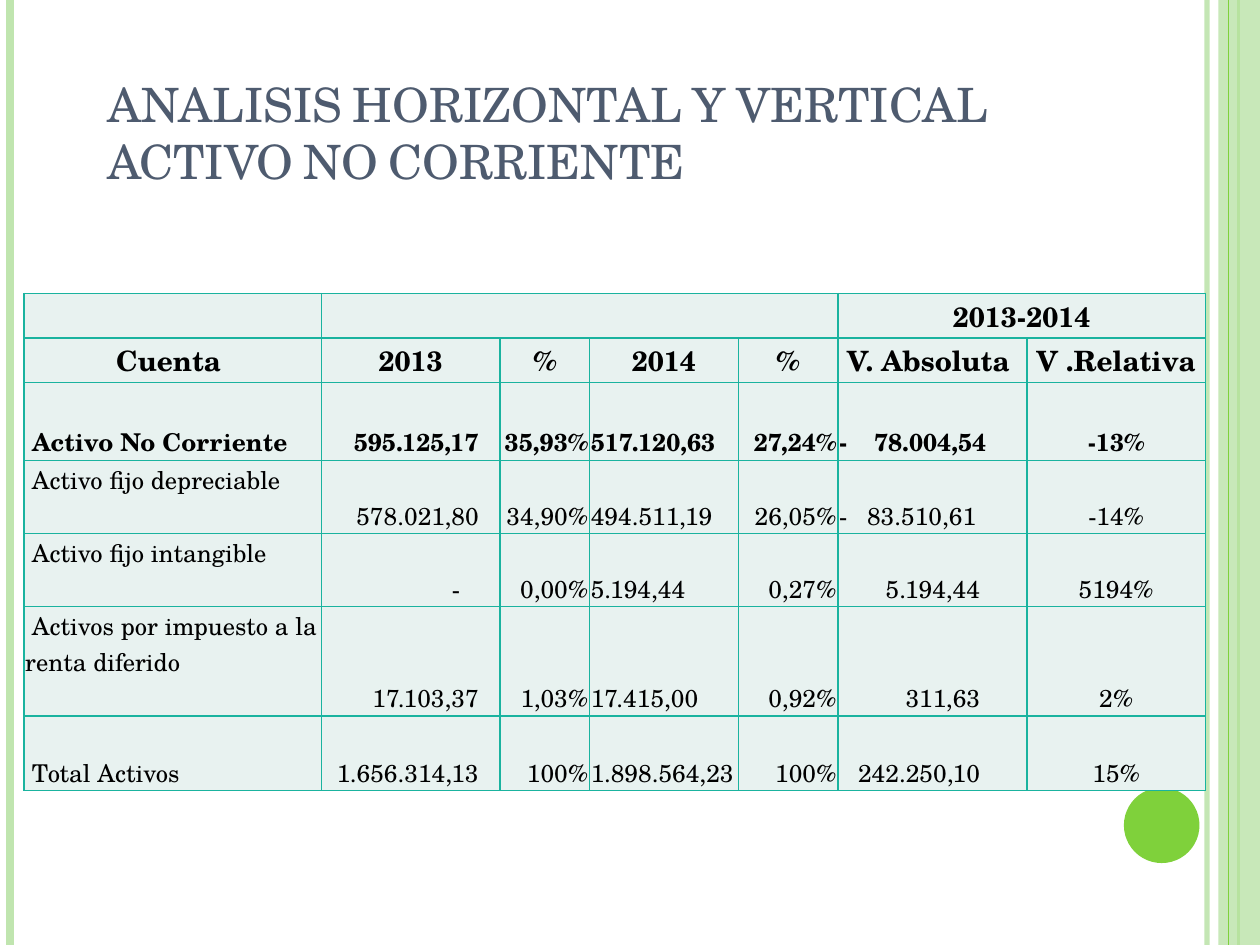
import pptx
import pptx.util
import pptx.dml.color
import pptx.enum.shapes
import pptx.enum.text
import pptx.oxml
import pptx.oxml.ns
from lxml import etree

Inches = pptx.util.Inches
Pt = pptx.util.Pt
ALIGN = pptx.enum.text.PP_ALIGN
ANCHOR = pptx.enum.text.MSO_ANCHOR
SHAPE = pptx.enum.shapes.MSO_SHAPE
qn = pptx.oxml.ns.qn

FONT = "TeX Gyre Schola"
COLORS = {
    "pale_green": "C0E5AF",
    "green": "7FD13B",
    "title": "4E5B6F",
    "text": "000000",
    "cell": "E8F2F0",
    "border": "1AB39F",
}
COLUMN_WIDTHS = [2.36, 1.42, 0.71, 1.18, 0.79, 1.5, 1.42]
ROW_HEIGHTS = [0.35, 0.35, 0.62, 0.58, 0.58, 0.87, 0.59]
COLUMN_ALIGNMENTS = [ALIGN.LEFT, ALIGN.RIGHT, ALIGN.RIGHT, ALIGN.LEFT,
                     ALIGN.RIGHT, ALIGN.LEFT, ALIGN.CENTER]
RIGHT_MARGINS = [0.01, 0.17, 0.01, 0.01, 0.01, 0.01, 0.01]
AMOUNT_TABS = {2: 1.17, 3: 1.09}
AMOUNT_TAB = 1.12
TOP_LABELS = (3, 4, 5)
ROWS = [
    ["", "", "", "", "", " 2013-2014 ", ""],
    ["Cuenta ", "2013", "%", "2014", "%", " V. Absoluta", "V .Relativa"],
    [" Activo No Corriente", "595.125,17", "35,93%", "517.120,63", "27,24%", "-\t78.004,54", "-13%"],
    [" Activo fijo depreciable", "578.021,80", "34,90%", "494.511,19", "26,05%", "-\t83.510,61", "-14%"],
    [" Activo fijo intangible", "-", "0,00%", "5.194,44", "0,27%", "\t5.194,44", "5194%"],
    [" Activos por impuesto a la renta diferido", "17.103,37", "1,03%", "17.415,00", "0,92%", "\t311,63", "2%"],
    [" Total Activos", "1.656.314,13", "100%", "1.898.564,23", "100%", "\t242.250,10", "15%"],
]


def rgb(name):
    """Return the named colour."""
    return pptx.dml.color.RGBColor.from_string(COLORS[name])


def set_opacity(shape, percent):
    """Make the solid colour of a shape partly transparent."""
    color = next(shape._element.spPr.iter(qn("a:srgbClr")))
    etree.SubElement(color, qn("a:alpha"), val=str(percent * 1000))


def add_run(paragraph, text, size, color, bold=False):
    """Add one formatted run to a paragraph."""
    run = paragraph.add_run()
    run.text = text
    run.font.name = FONT
    run.font.size = Pt(size)
    run.font.bold = bold
    run.font.color.rgb = rgb(color)
    return run


def add_stripe(slide, x, height, color, width):
    """Draw a vertical line from the top of the slide."""
    line = slide.shapes.add_connector(
        pptx.enum.shapes.MSO_CONNECTOR.STRAIGHT, Inches(x), 0, Inches(x), Inches(height))
    line.line.color.rgb = rgb(color)
    line.line.width = Pt(width)
    etree.SubElement(line._element.spPr, qn("a:effectLst"))
    return line


def add_block(slide, kind, left, top, width, height, color):
    """Draw a filled shape without an outline."""
    shape = slide.shapes.add_shape(
        kind, Inches(left), Inches(top), Inches(width), Inches(height))
    shape.shadow.inherit = False
    shape.fill.solid()
    shape.fill.fore_color.rgb = rgb(color)
    shape.line.fill.background()
    return shape


def add_frame(slide, width, height):
    """Draw the side stripes, the band and the disc."""
    set_opacity(add_stripe(slide, width - 0.42, height, "pale_green", 3), 93)
    add_stripe(slide, 0.08, height, "pale_green", 4.5)
    add_stripe(slide, width - 0.17, height, "green", 1.5)
    band = add_block(slide, SHAPE.RECTANGLE, width - 0.33, 0, 0.33, height, "pale_green")
    set_opacity(band, 87)
    add_stripe(slide, width - 0.25, height, "green", 0.75)
    add_block(slide, SHAPE.OVAL, width - 1.08, height - 1.25, 0.6, 0.6, "green")


def add_title(slide, left, top, width, height):
    """Place and fill the title placeholder."""
    title = slide.shapes.title
    title.left, title.top = Inches(left), Inches(top)
    title.width, title.height = Inches(width), Inches(height)
    frame = title.text_frame
    frame.word_wrap = True
    frame.auto_size = pptx.enum.text.MSO_AUTO_SIZE.NONE
    frame.vertical_anchor = ANCHOR.BOTTOM
    paragraph = frame.paragraphs[0]
    paragraph.alignment = ALIGN.LEFT
    run = add_run(paragraph, "ANALISIS HORIZONTAL Y VERTICAL ACTIVO NO CORRIENTE", 27, "title")
    run.font._element.set("cap", "small")


def set_borders(cell):
    """Outline the four sides of a cell."""
    properties = cell._tc.get_or_add_tcPr()
    for index, side in enumerate(("lnL", "lnR", "lnT", "lnB")):
        border = etree.Element(qn(f"a:{side}"), w=str(Pt(1)))
        fill = etree.SubElement(border, qn("a:solidFill"))
        etree.SubElement(fill, qn("a:srgbClr"), val=COLORS["border"])
        properties.insert(index, border)


def add_right_tab(paragraph, position):
    """Give a paragraph one right-aligned tab stop."""
    tabs = etree.SubElement(paragraph._element.get_or_add_pPr(), qn("a:tabLst"))
    etree.SubElement(tabs, qn("a:tab"), pos=str(Inches(position)), algn="r")


def fill_cell(cell, row, column, text):
    """Format one table cell and write its text."""
    header = row < 2
    cell.fill.solid()
    cell.fill.fore_color.rgb = rgb("cell")
    set_borders(cell)
    cell.margin_left = cell.margin_top = Inches(0.01)
    cell.margin_right = Inches(0.01 if header else RIGHT_MARGINS[column])
    if text == "-":
        cell.margin_right = Inches(0.32)
    cell.margin_bottom = 0
    top_label = column == 0 and row in TOP_LABELS
    cell.vertical_anchor = ANCHOR.TOP if top_label else ANCHOR.BOTTOM
    paragraph = cell.text_frame.paragraphs[0]
    centered = header and text != " V. Absoluta"
    paragraph.alignment = ALIGN.CENTER if centered else COLUMN_ALIGNMENTS[column]
    if "\t" in text:
        add_right_tab(paragraph, AMOUNT_TABS.get(row, AMOUNT_TAB))
    if text:
        add_run(paragraph, text, 16 if header else 14, "text", bold=row < 3)


def add_accounts_table(slide, left, top):
    """Build the table of accounts from its top-left corner."""
    table = slide.shapes.add_table(
        len(ROWS), len(COLUMN_WIDTHS), Inches(left), Inches(top),
        Inches(sum(COLUMN_WIDTHS)), Inches(sum(ROW_HEIGHTS))).table
    table.first_row = table.horz_banding = False
    for column, width in zip(table.columns, COLUMN_WIDTHS):
        column.width = Inches(width)
    for row, height in zip(table.rows, ROW_HEIGHTS):
        row.height = Inches(height)
    for row, texts in enumerate(ROWS):
        for column, text in enumerate(texts):
            fill_cell(table.cell(row, column), row, column, text)
    table.cell(0, 1).merge(table.cell(0, 4))
    table.cell(0, 5).merge(table.cell(0, 6))


def main():
    """Build and save the presentation."""
    presentation = pptx.Presentation()
    presentation.slide_width, presentation.slide_height = Inches(10), Inches(7.5)
    slide = presentation.slides.add_slide(presentation.slide_layouts[5])
    add_frame(slide, 10, 7.5)
    add_title(slide, 0.75, 0.68, 8.17, 0.87)
    add_accounts_table(slide, 0.19, 2.33)
    presentation.save("out.pptx")


if __name__ == "__main__":
    main()
